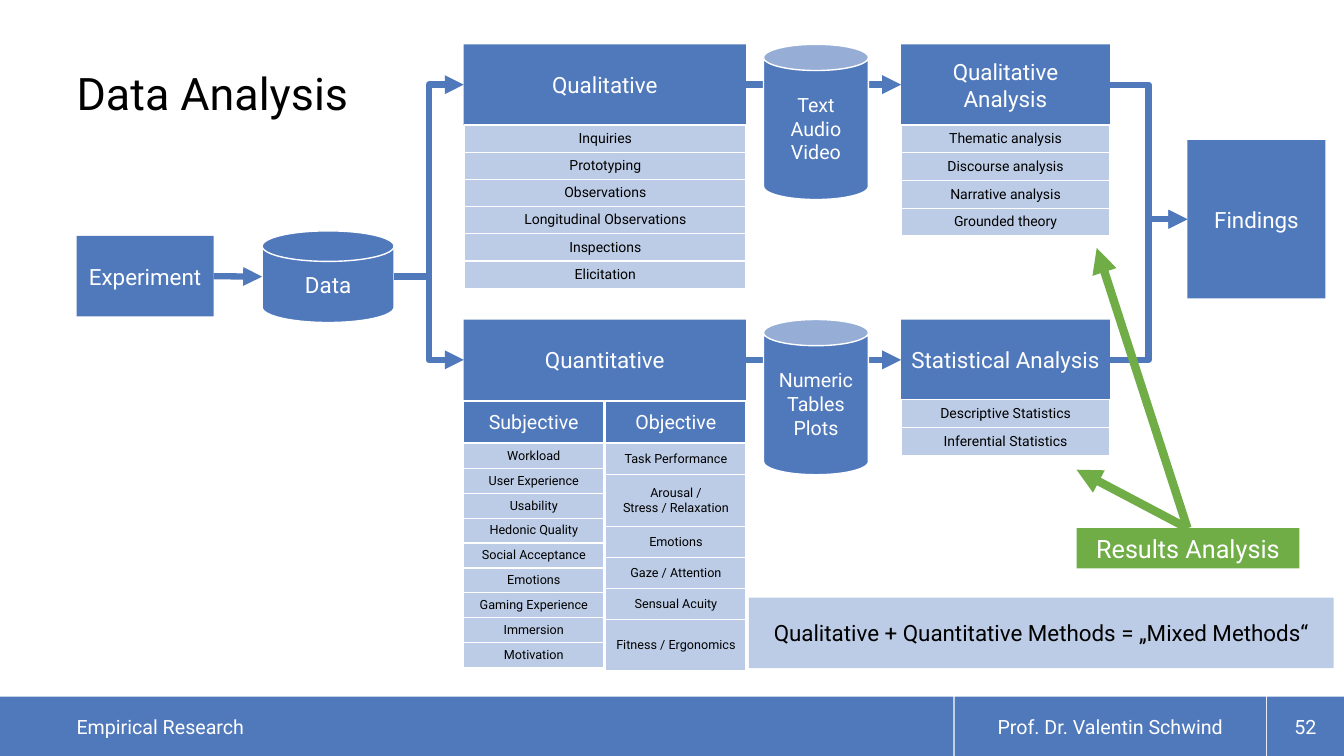
from lxml import etree
from pptx import Presentation
from pptx.dml.color import RGBColor
from pptx.enum.shapes import MSO_CONNECTOR, MSO_SHAPE
from pptx.enum.text import MSO_ANCHOR, MSO_AUTO_SIZE, PP_ALIGN
from pptx.oxml.ns import qn
from pptx.util import Inches, Pt

RECT, CAN = MSO_SHAPE.RECTANGLE, MSO_SHAPE.CAN
DISK = MSO_SHAPE.FLOWCHART_MAGNETIC_DISK
STRAIGHT, ELBOW = MSO_CONNECTOR.STRAIGHT, MSO_CONNECTOR.ELBOW
MIDDLE, BOTTOM = MSO_ANCHOR.MIDDLE, MSO_ANCHOR.BOTTOM
LEFT, CENTER = PP_ALIGN.LEFT, PP_ALIGN.CENTER
FIXED = MSO_AUTO_SIZE.NONE

UNIT = Inches(0.1)  # one column or row of the grid
COLS, ROWS = 133.33, 75
FONT = "Roboto"
BLUE, PALE, GREEN = "5079BC", "BCCCE6", "70AD47"
WHITE, BLACK = "FFFFFF", "000000"


def grid(*counts):
    return [round(n * UNIT) for n in counts]


def rgb(color):
    return RGBColor.from_string(color)


class Diagram:
    def __init__(self, prs):
        self.s = prs.slides.add_slide(prs.slide_layouts[1])

    def put_text(self, tf, text, size, color, align=CENTER):
        """Fill a text frame, one paragraph for each line of text."""
        for i, line in enumerate(text.split("\n")):
            p = tf.add_paragraph() if i else tf.paragraphs[0]
            p.alignment = align
            r = p.add_run()
            r.text = line
            r.font.size, r.font.name = Pt(size), FONT
            r.font.color.rgb = rgb(color)

    def placeholder(self, idx, at, text, size, color, anchor):
        sp = self.s.placeholders[idx]
        sp.left, sp.top, sp.width, sp.height = grid(*at)
        tf = sp.text_frame
        tf.auto_size, tf.word_wrap, tf.vertical_anchor = FIXED, True, anchor
        tf.margin_left = tf.margin_top = tf.margin_right = tf.margin_bottom = 0
        p = tf.paragraphs[0]
        pPr = p._p.get_or_add_pPr()
        pPr.set("marL", "0")
        pPr.set("indent", "0")
        etree.SubElement(pPr, qn("a:buNone"))
        p.space_before = Pt(0)
        self.put_text(tf, text, size, color, LEFT)
        return p

    def box(self, at, text="", size=16, kind=RECT, fill=BLUE, color=WHITE, line=None):
        sp = self.s.shapes.add_shape(kind, *grid(*at))
        sp.shadow.inherit = False
        sp.fill.solid()
        sp.fill.fore_color.rgb = rgb(fill)
        if line:
            sp.line.color.rgb = rgb(line)
            sp.line.width = Pt(1)
        else:
            sp.line.fill.background()
        tf = sp.text_frame
        tf.word_wrap, tf.vertical_anchor = True, MIDDLE
        if text:
            self.put_text(tf, text, size, color)
        return sp

    def footer_bar(self, left, right, text=""):
        """Draw a bar along the bottom edge, behind the placeholders."""
        bar = self.box((left, 69.1, right - left, 5.9), text, 14)
        self.s.shapes.title.element.addprevious(bar.element)

    def arrow(self, start, end, kind=STRAIGHT, color=BLUE, width=4.5):
        c = self.s.shapes.add_connector(kind, *grid(*start, *end))
        c.line.color.rgb = rgb(color)
        c.line.width = Pt(width)
        spPr = c.element.spPr
        etree.SubElement(spPr.find(qn("a:ln")), qn("a:tailEnd"), type="triangle")
        etree.SubElement(spPr, qn("a:effectLst"))

    def link(self, a, b, kind=STRAIGHT):
        """Point from the right side of shape a to the left side of shape b."""
        start = (a.left + a.width) / UNIT, (a.top + a.height / 2) / UNIT
        end = b.left / UNIT, (b.top + b.height / 2) / UNIT
        self.arrow(start, end, kind)

    def method_list(self, left, top, width, items, heights, size=10):
        x, y, w, h = grid(left, top, width, sum(heights))
        table = self.s.shapes.add_table(len(items), 1, x, y, w, h).table
        table.first_row = table.horz_banding = False
        for row, item, height in zip(table.rows, items, heights):
            row.height = grid(height)[0]
            cell = row.cells[0]
            cell.vertical_anchor = MIDDLE
            cell.margin_left = cell.margin_right = Inches(0.05)
            cell.margin_top = cell.margin_bottom = Inches(0.03)
            tcPr = cell._tc.get_or_add_tcPr()
            for side in ("a:lnL", "a:lnR", "a:lnT", "a:lnB"):
                ln = etree.SubElement(tcPr, qn(side), w=str(Pt(1)))
                solid = etree.SubElement(ln, qn("a:solidFill"))
                etree.SubElement(solid, qn("a:srgbClr"), val=WHITE)
            cell.fill.solid()
            cell.fill.fore_color.rgb = rgb(PALE)
            self.put_text(cell.text_frame, item, size, BLACK)


def main():
    prs = Presentation()
    prs.slide_width, prs.slide_height = grid(COLS, ROWS)
    d = Diagram(prs)

    d.footer_bar(0, 94.6)
    d.footer_bar(94.7, 125.6, "Prof. Dr. Valentin Schwind")
    d.footer_bar(125.7, COLS, "52")
    title = d.placeholder(0, (7.6, 1.3, 118.1, 10.6), "Data Analysis", 32, BLACK, BOTTOM)
    title.line_spacing = 0.9
    d.placeholder(1, (7.6, 69.1, 85, 5.9), "Empirical Research", 14, WHITE, MIDDLE)

    experiment = d.box((7.6, 23.4, 13.6, 8), "Experiment")
    data = d.box((26, 22.9, 13.1, 9.1), "Data", kind=DISK, line=WHITE)
    findings = d.box((117.8, 13.9, 13.7, 15.7), "Findings")
    d.link(experiment, data)

    branches = (
        (4.4, "Qualitative", "Text\nAudio\nVideo", "Qualitative Analysis"),
        (31.7, "Quantitative", "Numeric\nTables\nPlots", "Statistical Analysis"),
    )
    for top, method, material, analysis in branches:
        source = d.box((46, top, 28, 8), method)
        result = d.box((89.4, top, 20.7, 8), analysis)
        d.link(source, result)
        d.box((75.75, top, 10.4, 15.4), material, 14, CAN, line=WHITE)
        d.link(data, source, ELBOW)
        d.link(result, findings, ELBOW)

    d.method_list(46.1, 12.4, 27.9, (
        "Inquiries", "Prototyping", "Observations", "Longitudinal Observations",
        "Inspections", "Elicitation"), [2.7] * 6)
    d.method_list(89.4, 12.4, 20.7, (
        "Thematic analysis", "Discourse analysis", "Narrative analysis",
        "Grounded theory"), [2.75] * 4)
    d.method_list(89.4, 39.6, 20.7, (
        "Descriptive Statistics", "Inferential Statistics"), [2.8] * 2)

    measures = (
        (46, "Subjective", (
            "Workload", "User Experience", "Usability", "Hedonic Quality",
            "Social Acceptance", "Emotions", "Gaming Experience", "Immersion",
            "Motivation"), [2.47] * 9),
        (60.1, "Objective", (
            "Task Performance", "Arousal /\nStress / Relaxation", "Emotions",
            "Gaze / Attention", "Sensual Acuity", "Fitness / Ergonomics"),
         [3.1, 5.1, 3.1, 3.1, 3.1, 5]),
    )
    for left, heading, items, heights in measures:
        d.box((left, 39.8, 13.9, 4.1), heading, 14, line=WHITE)
        d.method_list(left, 44, 13.9, items, heights, 9)

    d.box((74.3, 59.3, 58, 7), "Qualitative + Quantitative Methods = „Mixed Methods“",
          fill=PALE, color=BLACK)
    for target in ((106.8, 46.6), (108.8, 24.6)):
        d.arrow((117.8, 52.4), target, color=GREEN, width=6)
    d.box((106.8, 52.4, 22.1, 4), "Results Analysis", 18, fill=GREEN)

    prs.save("out.pptx")


if __name__ == "__main__":
    main()
